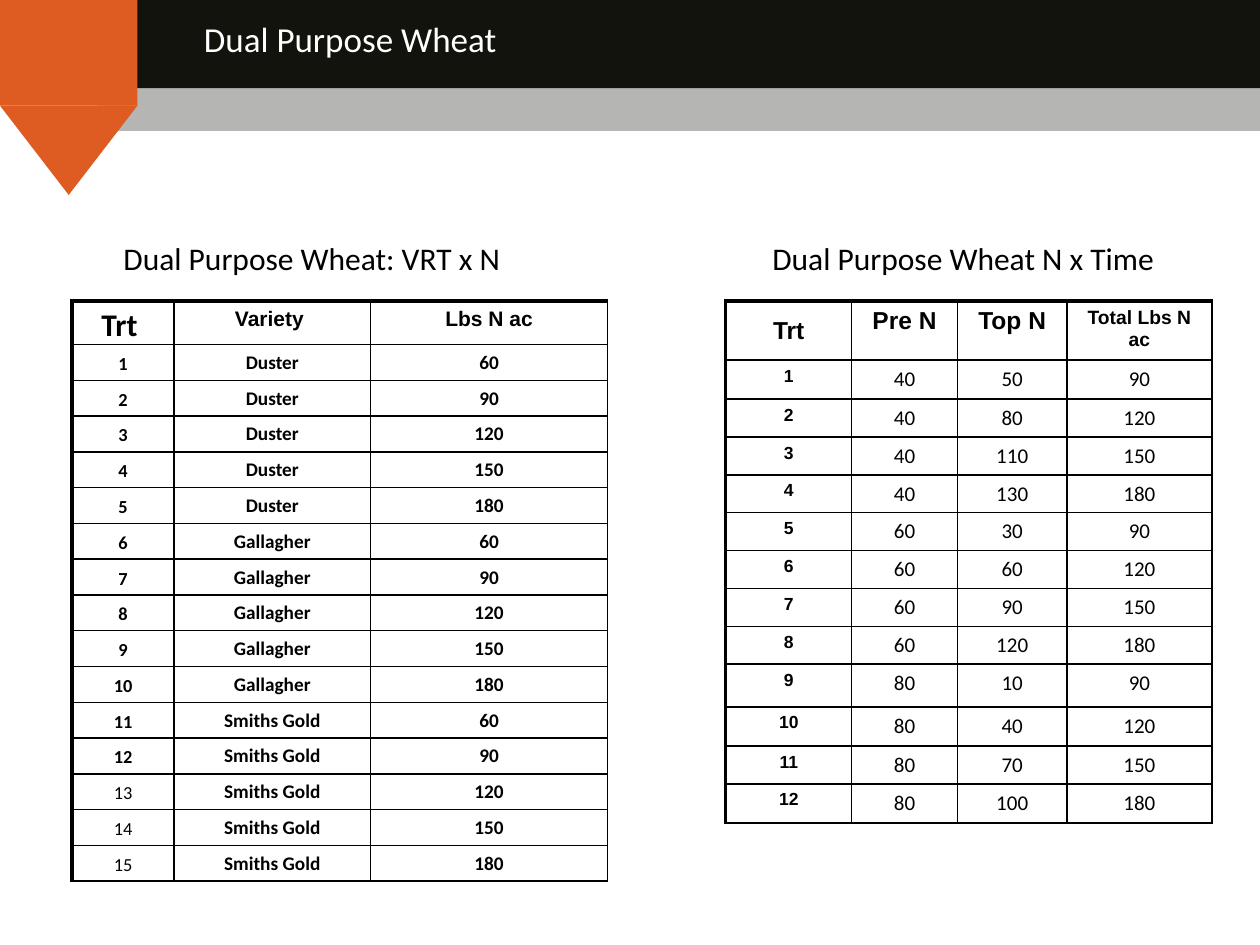
"""Build the dual purpose wheat treatment slide."""
from itertools import product

from lxml.etree import SubElement
from pptx import Presentation
from pptx.dml.color import RGBColor
from pptx.enum.shapes import MSO_SHAPE
from pptx.enum.text import MSO_ANCHOR, MSO_AUTO_SIZE, PP_ALIGN
from pptx.oxml.ns import qn
from pptx.util import Cm, Pt

BLACK = RGBColor(0x00, 0x00, 0x00)
WHITE = RGBColor(0xFF, 0xFF, 0xFF)
INK = RGBColor(0x13, 0x13, 0x0D)
GREY = RGBColor(0xA9, 0xAA, 0xA8)
ORANGE = RGBColor(0xDE, 0x5B, 0x21)

VARIETIES = ["Duster", "Gallagher", "Smiths Gold"]
RATES = [60, 90, 120, 150, 180]
TOTALS = [90, 120, 150, 180]
TOP_N = {40: [50, 80, 110, 130], 60: [30, 60, 90, 120], 80: [10, 40, 70, 100]}


def add_block(slide, shape, left, top, width, height, color, alpha=None):
    """Add a filled shape without outline."""
    sp = slide.shapes.add_shape(shape, Cm(left), Cm(top), Cm(width), Cm(height))
    sp.shadow.inherit = False
    sp.fill.solid()
    sp.fill.fore_color.rgb = color
    sp.line.fill.background()
    if alpha:
        clr = sp.fill._xPr.find(qn("a:solidFill"))[0]
        SubElement(clr, qn("a:alpha"), val=str(alpha * 1000))
    return sp


def style_paragraph(p, font, size, color=BLACK, bold=False):
    """Set the font of a whole paragraph."""
    p.font.name = font
    p.font.size = Pt(size)
    p.font.color.rgb = color
    p.font.bold = bold


def add_label(slide, text, left, top, width, height, size, color=BLACK, wrap=False):
    """Add a one-line text box."""
    tf = slide.shapes.add_textbox(Cm(left), Cm(top), Cm(width), Cm(height)).text_frame
    tf.word_wrap = wrap
    tf.auto_size = MSO_AUTO_SIZE.SHAPE_TO_FIT_TEXT
    p = tf.paragraphs[0]
    p.text = text
    style_paragraph(p, "Calibri", size, color)


def set_borders(cell, first_row, first_col):
    """Draw black cell borders, heavier on the table's top and left edges."""
    tc_pr = cell._tc.get_or_add_tcPr()
    widths = {"L": 2.25 if first_col else 1, "R": 1, "T": 2.25 if first_row else 1, "B": 1}
    for side, width in widths.items():
        ln = SubElement(tc_pr, qn(f"a:ln{side}"), w=str(Pt(width)))
        fill = SubElement(ln, qn("a:solidFill"))
        SubElement(fill, qn("a:srgbClr"), val=str(BLACK))


def fill_cell(cell, text, font, size, bold):
    """Write centred text into a cell."""
    p = cell.text_frame.paragraphs[0]
    p.text = str(text)
    p.alignment = PP_ALIGN.CENTER
    style_paragraph(p, font, size, bold=bold)


def add_grid(slide, left, top, height, col_widths, row_heights, rows, style):
    """Add a bordered table; style(row, col) gives font, size and bold."""
    frame = slide.shapes.add_table(len(rows), len(col_widths), Cm(left), Cm(top),
                                   Cm(sum(col_widths)), Cm(height))
    table = frame.table
    table.first_row = table.horz_banding = False
    for col, width in zip(table.columns, col_widths):
        col.width = Cm(width)
    for row, row_height in zip(table.rows, row_heights):
        row.height = Cm(row_height)
    for r, values in enumerate(rows):
        for c, value in enumerate(values):
            cell = table.cell(r, c)
            set_borders(cell, r == 0, c == 0)
            cell.fill.background()
            fill_cell(cell, value, *style(r, c))
    frame.height = Cm(height)
    return table


def variety_style(row, col):
    """Font, size and bold for the variety table."""
    if row == 0:
        return ("Arial", 12, True) if col else ("Calibri", 18, True)
    return ("Calibri", 11, True) if col else ("Calibri", 10.5, row <= 12)


def timing_style(row, col):
    """Font, size and bold for the timing table."""
    if row == 0:
        return "Arial", 11 if col == 3 else 14, True
    return ("Calibri", 12, False) if col else ("Arial", 10, True)


def add_variety_table(slide):
    """Add the variety by nitrogen table."""
    rows = [("Trt ", "Variety ", "Lbs N ac")]
    rows += [(i, *pair) for i, pair in enumerate(product(VARIETIES, RATES), 1)]
    table = add_grid(slide, 1.45, 6.07, 11.68, [2.06, 3.96, 4.78],
                     [0.81] + [0.64] * 15, rows, variety_style)
    for r in range(len(rows)):
        cell = table.cell(r, 0)
        cell.vertical_anchor = MSO_ANCHOR.MIDDLE
        cell.margin_top = cell.margin_bottom = 0
        cell.text_frame.paragraphs[0].line_spacing = 1.15


def add_timing_table(slide):
    """Add the nitrogen by time table."""
    splits = [(pre, top, total) for pre, tops in TOP_N.items()
              for top, total in zip(tops, TOTALS)]
    rows = [("Trt", "Pre N", "Top N", "Total Lbs N ac")]
    rows += [(i, *split) for i, split in enumerate(splits, 1)]
    heights = [0.86, 0.79] + [0.76] * 7 + [0.86, 0.79, 0.76, 0.79]
    table = add_grid(slide, 14.63, 6.07, 10.52, [2.54, 2.13, 2.21, 2.92],
                     heights, rows, timing_style)
    table.cell(0, 0).vertical_anchor = MSO_ANCHOR.MIDDLE


def add_header(slide):
    """Add the banner, the orange pennant and the title."""
    add_block(slide, MSO_SHAPE.RECTANGLE, 1.96, 1.6, 23.44, 1.04, GREY, alpha=86)
    add_block(slide, MSO_SHAPE.RECTANGLE, 0, 0, 25.4, 1.78, INK)
    add_block(slide, MSO_SHAPE.RECTANGLE, 0, 0, 2.77, 2.13, ORANGE)
    tip = add_block(slide, MSO_SHAPE.ISOSCELES_TRIANGLE, 0, 2.13, 2.77, 1.8, ORANGE)
    tip.rotation = 180
    add_label(slide, "Dual Purpose Wheat", 3.86, 0.23, 20.32, 1.12, 20, WHITE, wrap=True)


def main():
    """Build and save the slide."""
    prs = Presentation()
    prs.slide_width, prs.slide_height = Cm(25.4), Cm(19.05)
    slide = prs.slides.add_slide(prs.slide_layouts[6])
    add_header(slide)
    add_timing_table(slide)
    add_label(slide, "Dual Purpose Wheat N x Time", 15.32, 4.7, 8.46, 1.02, 18)
    add_variety_table(slide)
    add_label(slide, "Dual Purpose Wheat: VRT x N", 2.24, 4.7, 8.36, 1.02, 18)
    prs.save("out.pptx")


if __name__ == "__main__":
    main()
